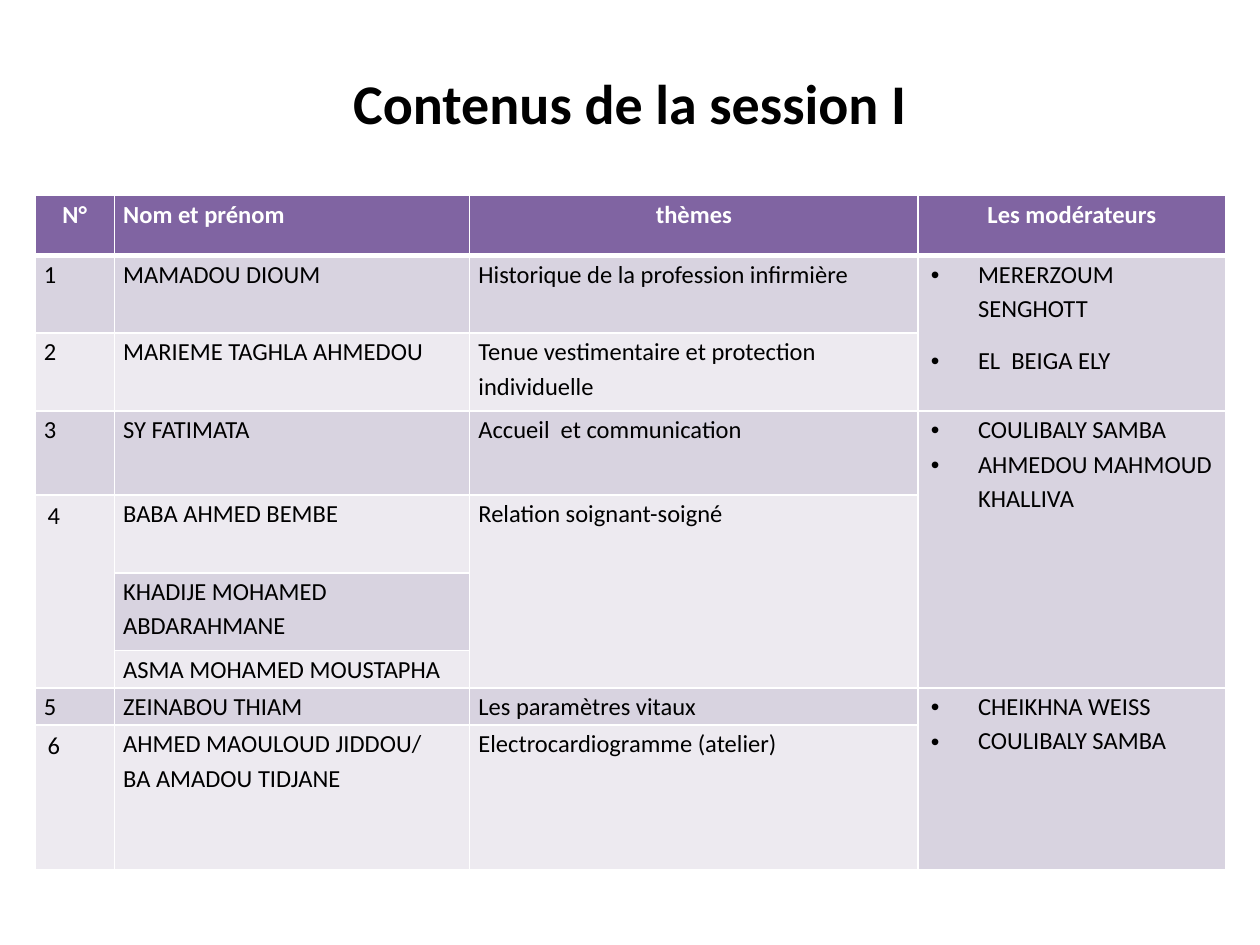
from dataclasses import dataclass

import pptx
import pptx.dml.color
import pptx.enum.text
import pptx.oxml
import pptx.oxml.ns
import pptx.util

Pt = pptx.util.Pt
ALIGN = pptx.enum.text.PP_ALIGN
ANCHOR = pptx.enum.text.MSO_ANCHOR

COLORS = {
    "head": "8064A2",
    "dark": "D8D3E0",
    "light": "EDEAF0",
    "white": "FFFFFF",
    "black": "000000",
}
FONT = "Calibri"
COL_WIDTHS = [45.4, 203, 256.3, 175.7]
ROW_HEIGHTS = [34.3, 44.5, 44.5, 48, 44.5, 44.5, 21.3, 21.3, 82.8]
HEADERS = ["N°", "Nom et prénom", "thèmes", "Les modérateurs"]


@dataclass
class Entry:
    row: int
    col: int
    text: str
    span: int = 1
    after: float = 0


ENTRIES = [
    Entry(1, 0, "1"),
    Entry(2, 0, "2"),
    Entry(3, 0, "3"),
    Entry(4, 0, "4", 3),
    Entry(7, 0, "5"),
    Entry(8, 0, "6"),
    Entry(1, 1, "MAMADOU DIOUM"),
    Entry(2, 1, "MARIEME TAGHLA AHMEDOU"),
    Entry(3, 1, "SY FATIMATA"),
    Entry(4, 1, "BABA AHMED BEMBE"),
    Entry(5, 1, "KHADIJE MOHAMED ABDARAHMANE"),
    Entry(6, 1, "ASMA MOHAMED MOUSTAPHA"),
    Entry(7, 1, "ZEINABOU THIAM"),
    Entry(8, 1, "AHMED MAOULOUD JIDDOU/\nBA AMADOU TIDJANE"),
    Entry(1, 2, "Historique de la profession infirmière"),
    Entry(2, 2, "Tenue vestimentaire et protection individuelle"),
    Entry(3, 2, "Accueil  et communication"),
    Entry(4, 2, "Relation soignant-soigné", 3),
    Entry(7, 2, "Les paramètres vitaux"),
    Entry(8, 2, "Electrocardiogramme (atelier)"),
    Entry(1, 3, "MERERZOUM SENGHOTT\nEL  BEIGA ELY", 2, after=10),
    Entry(3, 3, "COULIBALY SAMBA\nAHMEDOU MAHMOUD KHALLIVA", 4),
    Entry(7, 3, "CHEIKHNA WEISS\nCOULIBALY SAMBA", 2),
]


def rgb(name: str) -> pptx.dml.color.RGBColor:
    return pptx.dml.color.RGBColor.from_string(COLORS[name])


def add_bullet(p) -> None:
    pPr = p._p.get_or_add_pPr()
    pPr.set("marL", str(Pt(27)))
    pPr.set("indent", str(Pt(-27)))
    ns = pptx.oxml.ns.nsdecls("a")
    pPr.append(pptx.oxml.parse_xml(f'<a:buFont {ns} typeface="Arial"/>'))
    pPr.append(pptx.oxml.parse_xml(f'<a:buChar {ns} char="•"/>'))


def write(tf, text: str, *, size: float = 14, bold: bool = False, color: str = "black",
          align=ALIGN.LEFT, spacing: float = 1.15, after: float = 0, bullet: bool = False) -> None:
    for i, line in enumerate(text.split("\n")):
        p = tf.add_paragraph() if i else tf.paragraphs[0]
        p.alignment = align
        p.line_spacing = spacing
        p.space_after = Pt(after)
        if bullet:
            add_bullet(p)
        r = p.add_run()
        r.text = line
        r.font.name = FONT
        r.font.size = Pt(size)
        r.font.bold = bold
        r.font.color.rgb = rgb(color)


def set_borders(cell, top: float, bottom: float) -> None:
    tcPr = cell._tc.get_or_add_tcPr()
    ns = pptx.oxml.ns.nsdecls("a")
    sides = {"lnL": 1, "lnR": 1, "lnT": top, "lnB": bottom}
    for i, (side, width) in enumerate(sides.items()):
        tcPr.insert(i, pptx.oxml.parse_xml(
            f'<a:{side} {ns} w="{Pt(width)}"><a:solidFill>'
            f'<a:srgbClr val="{COLORS["white"]}"/></a:solidFill></a:{side}>'))


def style_cell(cell, row: int, fill: str) -> None:
    cell.fill.solid()
    cell.fill.fore_color.rgb = rgb(fill)
    cell.margin_left = cell.margin_right = Pt(5)
    cell.margin_top = cell.margin_bottom = 0
    set_borders(cell, 3 if row == 1 else 1, 3 if row == 0 else 1)


def fill_entry(table, e: Entry) -> None:
    cell = table.cell(e.row, e.col)
    if e.span > 1:
        cell.merge(table.cell(e.row + e.span - 1, e.col))
    moderators = e.col == 3
    inset_number = e.text in ("4", "6")
    if moderators or inset_number:
        cell.margin_left = cell.margin_right = Pt(7.2)
    if inset_number:
        cell.margin_top = cell.margin_bottom = Pt(3.6)
    write(cell.text_frame, e.text, spacing=1 if inset_number else 1.15,
          after=e.after, bullet=moderators)


def add_sessions(s) -> None:
    frame = s.shapes.add_table(len(ROW_HEIGHTS), len(COL_WIDTHS), Pt(20), Pt(111.6),
                               Pt(sum(COL_WIDTHS)), Pt(sum(ROW_HEIGHTS)))
    table = frame.table
    table.horz_banding = False
    for column, width in zip(table.columns, COL_WIDTHS):
        column.width = Pt(width)
    for i, height in enumerate(ROW_HEIGHTS):
        table.rows[i].height = Pt(height)
        for j in range(len(COL_WIDTHS)):
            fill = "head" if i == 0 else "dark" if i % 2 or j == 3 else "light"
            style_cell(table.cell(i, j), i, fill)
    for j, text in enumerate(HEADERS):
        write(table.cell(0, j).text_frame, text, bold=True, color="white",
              align=ALIGN.LEFT if j == 1 else ALIGN.CENTER)
    for e in ENTRIES:
        fill_entry(table, e)


def add_title(s) -> None:
    sp = s.shapes.add_textbox(Pt(36), Pt(21.6), Pt(648), Pt(73))
    tf = sp.text_frame
    tf.word_wrap = True
    tf.vertical_anchor = ANCHOR.MIDDLE
    write(tf, "Contenus de la session I", size=32, bold=True, align=ALIGN.CENTER, spacing=1)


def main() -> None:
    prs = pptx.Presentation()
    prs.slide_width, prs.slide_height = Pt(720), Pt(540)
    s = prs.slides.add_slide(prs.slide_layouts[6])
    add_title(s)
    add_sessions(s)
    prs.save("out.pptx")


if __name__ == "__main__":
    main()
